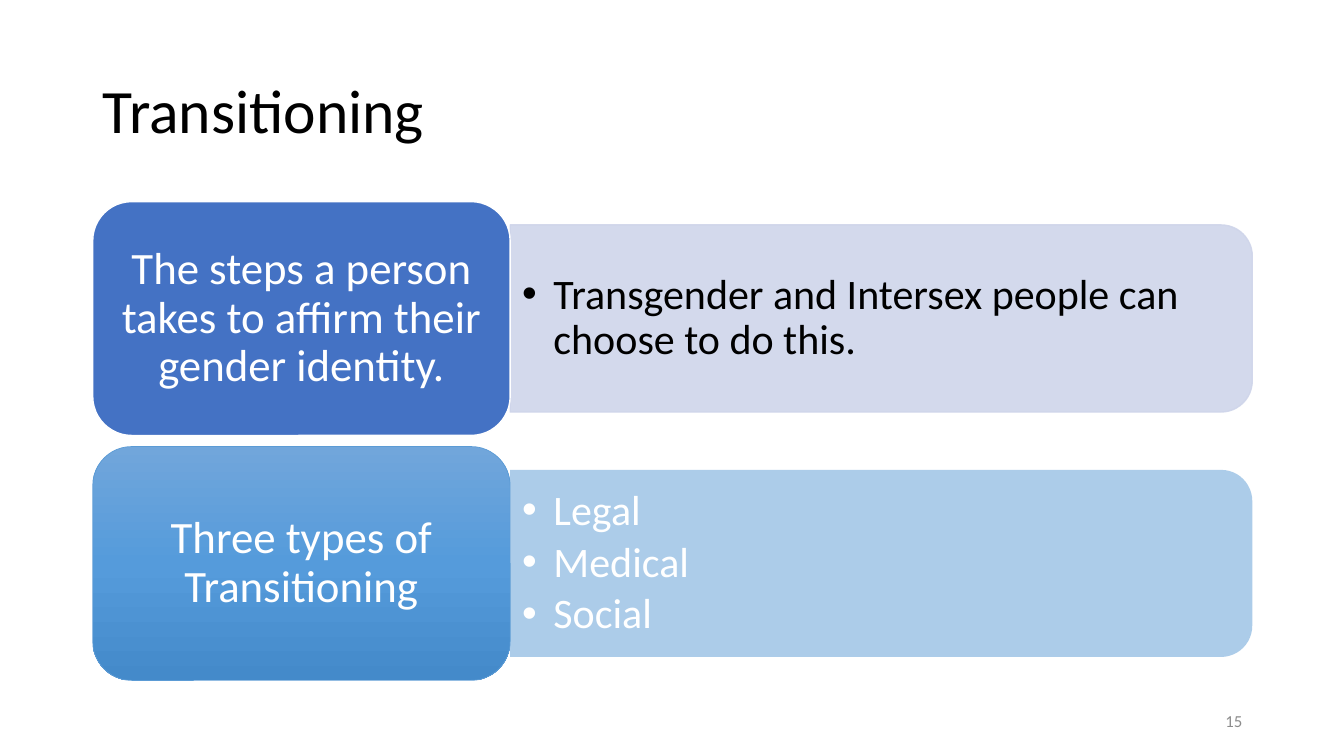
from dataclasses import dataclass

from lxml.etree import SubElement
from pptx import Presentation
from pptx.dml.color import RGBColor
from pptx.enum.shapes import MSO_SHAPE as Shape
from pptx.enum.text import MSO_ANCHOR as Anchor, PP_ALIGN as Align
from pptx.oxml.ns import qn
from pptx.util import Inches, Pt

COLORS = {
    "black": "000000", "white": "FFFFFF", "number": "8C8C8C",
    "blue": "4472C4", "lavender": "CFD5EA", "sky": "5B9BD5",
    "sky_top": "71A6DB", "sky_middle": "559BDB", "sky_bottom": "448ACA",
}
FONT = "Calibri"

# Grid: a label column and a detail column, in two rows
MARGIN, CONTENT_WIDTH = 0.92, 11.5
LABEL_WIDTH = CONTENT_WIDTH * 0.36
PANEL_WIDTH = CONTENT_WIDTH - LABEL_WIDTH
PANEL_LEFT = MARGIN + LABEL_WIDTH
FIRST_ROW, ROW_HEIGHT, ROW_STEP = 2.0, 2.32, 2.43
PANEL_HEIGHT = ROW_HEIGHT * 0.8


@dataclass
class Topic:
    label: str
    details: list[str]
    label_fill: list[str]  # several colours make a vertical gradient
    label_line: str
    line_width: float
    panel_fill: str
    panel_opacity: int
    panel_line: bool
    detail_color: str


TOPICS = [
    Topic("The steps a person takes to affirm their gender identity.",
          ["Transgender and Intersex people can choose to do this."],
          ["blue"], "white", 1, "lavender", 90, True, "black"),
    Topic("Three types of Transitioning", ["Legal", "Medical", "Social"],
          ["sky_top", "sky_middle", "sky_bottom"], "sky", 0.5,
          "sky", 50, False, "white"),
]


def rgb(name: str) -> RGBColor:
    return RGBColor.from_string(COLORS[name])


def write(frame, texts: list[str], size: float, color: str, align=Align.LEFT,
          insets=(0.1, 0.05), spacing=0.9, after=0.0, bullet=False) -> None:
    frame.word_wrap = True
    frame.vertical_anchor = Anchor.MIDDLE
    frame.margin_left = frame.margin_right = Inches(insets[0])
    frame.margin_top = frame.margin_bottom = Inches(insets[1])
    for index, text in enumerate(texts):
        para = frame.add_paragraph() if index else frame.paragraphs[0]
        para.alignment = align
        para.line_spacing = spacing
        para.space_before, para.space_after = Pt(0), Pt(after)
        if bullet:
            properties = para._p.get_or_add_pPr()
            properties.set("marL", str(Inches(0.31)))
            properties.set("indent", str(-Inches(0.31)))
            SubElement(properties, qn("a:buFont"), typeface="Arial")
            SubElement(properties, qn("a:buChar"), char="•")
        span = para.add_run()
        span.text = text
        span.font.name, span.font.size = FONT, Pt(size)
        span.font.color.rgb = rgb(color)


def add_box(page, left: float, top: float, width: float, height: float):
    return page.shapes.add_textbox(*map(Inches, (left, top, width, height)))


def set_opacity(fill, percent: int) -> None:
    color = fill._xPr.find(f".//{qn('a:srgbClr')}")
    SubElement(color, qn("a:alpha"), val=str(percent * 1000))


def fill_gradient(shape, names: list[str]) -> None:
    shape.fill.gradient()
    shape.fill.gradient_angle = 270
    stops = shape._element.spPr.find(f".//{qn('a:gsLst')}")
    for stop in list(stops):
        stops.remove(stop)
    for index, name in enumerate(names):
        position = index * 100000 // (len(names) - 1)
        stop = SubElement(stops, qn("a:gs"), pos=str(position))
        SubElement(stop, qn("a:srgbClr"), val=COLORS[name])


def add_panel(page, topic: Topic, middle: float) -> None:
    # Turned a quarter so that the rounded end faces right
    center = PANEL_LEFT + PANEL_WIDTH / 2
    panel = page.shapes.add_shape(
        Shape.ROUND_2_SAME_RECTANGLE,
        Inches(center - PANEL_HEIGHT / 2), Inches(middle - PANEL_WIDTH / 2),
        Inches(PANEL_HEIGHT), Inches(PANEL_WIDTH))
    panel.rotation = 90
    panel.shadow.inherit = False
    panel.fill.solid()
    panel.fill.fore_color.rgb = rgb(topic.panel_fill)
    set_opacity(panel.fill, topic.panel_opacity)
    if topic.panel_line:
        panel.line.width = Pt(1)
        panel.line.color.rgb = rgb(topic.panel_fill)
        set_opacity(panel.line.fill, topic.panel_opacity)
    else:
        panel.line.fill.background()

    height = PANEL_HEIGHT - 0.18
    box = add_box(page, PANEL_LEFT, middle - height / 2, PANEL_WIDTH - 0.09, height)
    write(box.text_frame, topic.details, 30, topic.detail_color,
          insets=(0.12, 0.06), after=4.5, bullet=True)


def add_label(page, topic: Topic, top: float) -> None:
    label = page.shapes.add_shape(
        Shape.ROUNDED_RECTANGLE,
        *map(Inches, (MARGIN, top, LABEL_WIDTH, ROW_HEIGHT)))
    label.shadow.inherit = False
    if len(topic.label_fill) > 1:
        fill_gradient(label, topic.label_fill)
    else:
        label.fill.solid()
        label.fill.fore_color.rgb = rgb(topic.label_fill[0])
    label.line.color.rgb = rgb(topic.label_line)
    label.line.width = Pt(topic.line_width)
    write(label.text_frame, [topic.label], 32, "white", Align.CENTER, (0.13, 0.07))


def main() -> None:
    deck = Presentation()
    deck.slide_width, deck.slide_height = Inches(13.33), Inches(7.5)
    page = deck.slides.add_slide(deck.slide_layouts[5])

    # Title
    title = page.shapes.title
    title.left, title.top = Inches(MARGIN), Inches(0.4)
    title.width, title.height = Inches(CONTENT_WIDTH), Inches(1.45)
    write(title.text_frame, ["Transitioning"], 44, "black")

    # Topic rows
    for row, topic in enumerate(TOPICS):
        top = FIRST_ROW + row * ROW_STEP
        add_panel(page, topic, top + ROW_HEIGHT / 2)
        add_label(page, topic, top)

    # Page number
    number = add_box(page, MARGIN + CONTENT_WIDTH - 3, 6.95, 3, 0.4)
    write(number.text_frame, ["15"], 12, "number", Align.RIGHT, spacing=1.0)

    deck.save("out.pptx")


if __name__ == "__main__":
    main()
